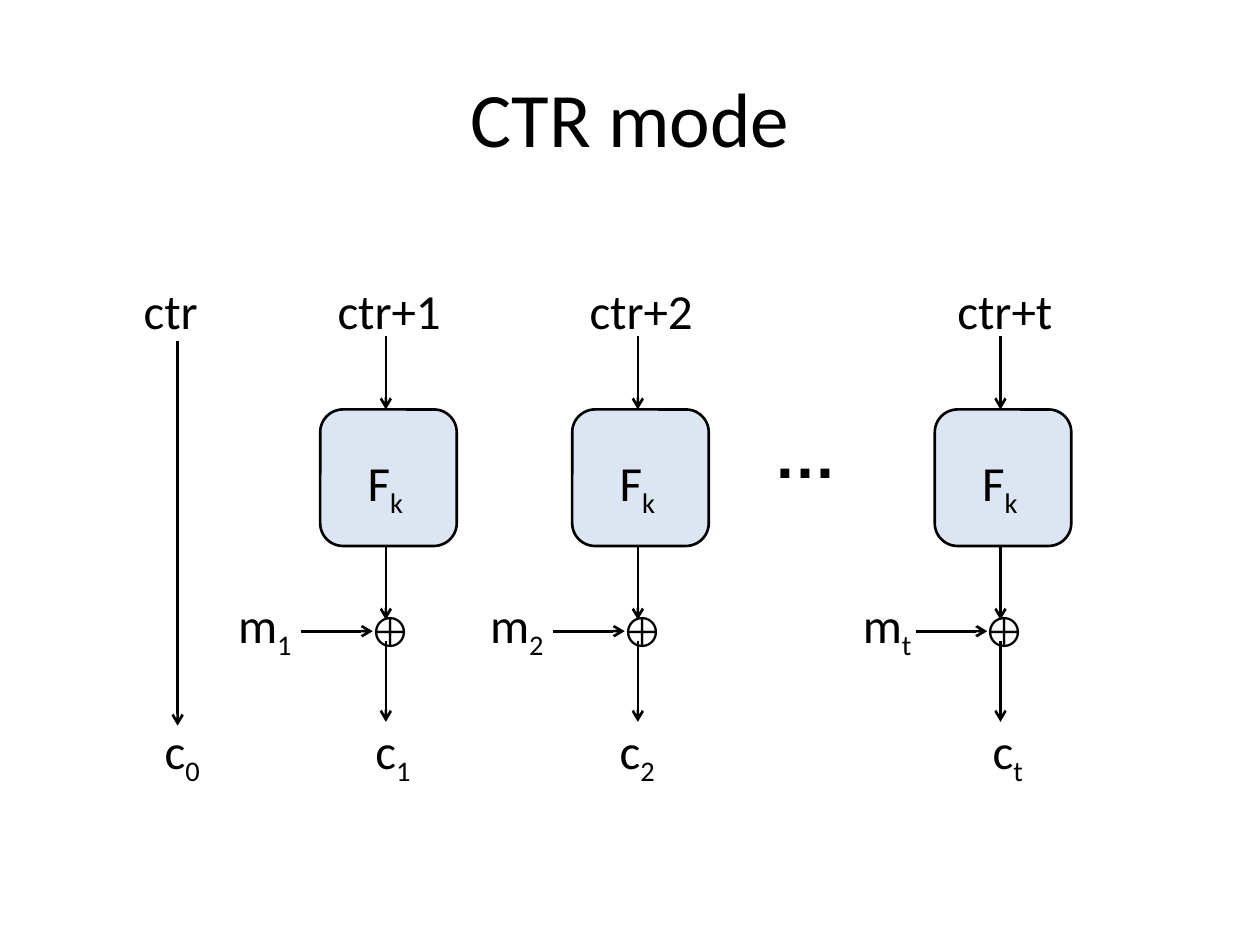
import pptx
import pptx.dml.color
import pptx.enum.shapes
import pptx.enum.text
import pptx.oxml
import pptx.oxml.ns
import pptx.util
from dataclasses import dataclass

Pt = pptx.util.Pt
RGB = pptx.dml.color.RGBColor


@dataclass(frozen=True)
class Theme:
    ink: RGB = RGB(0x00, 0x00, 0x00)
    block_fill: RGB = RGB(0xDC, 0xE6, 0xF2)
    font: str = "Calibri"
    symbol_font: str = "Arial"
    title_size: float = 44
    label_size: float = 28
    xor_size: float = 24
    dots_size: float = 36
    line_width: float = 1.5


THEME = Theme()
TITLE = "CTR mode"

# Each column: index, axis x, then (left, width) of counter, message and cipher labels
COLUMNS = [
    ("1", 220.5, (185.8, 74.2), (129, 46.8), (207.4, 36)),
    ("2", 364.5, (329.8, 74.2), (273, 46.8), (347, 36)),
    ("t", 571.7, (540, 70.6), (486, 43.2), (560.2, 33.8)),
]
INITIAL = {"axis": 101.5, "counter": (75, 46), "cipher": (87, 36)}
DOTS = (435, 234, 51, 51)

LABEL_HEIGHT = 41
COUNTER_TOP, KEY_TOP, MESSAGE_TOP, CIPHER_TOP = 157, 255, 336.2, 408.3
BLOCK_TOP, BLOCK_SIZE, BLOCK_OFFSET = 234, 78, 37.5
XOR_TOP, XOR_Y = 342.7, 360.7
VERTICAL_ARROWS = [(192.2, 234), (312.3, 354.2), (366.5, 412.5)]


def add_run(paragraph, text, size, font, bold=None, subscript=False):
    run = paragraph.add_run()
    run.text = text
    run.font.size = Pt(size)
    run.font.name = font
    run.font.bold = bold
    run.font.color.rgb = THEME.ink
    if subscript:
        run._r.get_or_add_rPr().set("baseline", "-25000")


def add_label(slide, box, text, subscript="", size=THEME.label_size,
              font=THEME.font, bold=None):
    shape = slide.shapes.add_textbox(*map(Pt, box))
    shape.text_frame.word_wrap = False
    shape.text_frame.auto_size = pptx.enum.text.MSO_AUTO_SIZE.SHAPE_TO_FIT_TEXT
    paragraph = shape.text_frame.paragraphs[0]
    add_run(paragraph, text, size, font, bold)
    if subscript:
        add_run(paragraph, subscript, size, font, bold, subscript=True)


def add_arrow(slide, start, end):
    connector = slide.shapes.add_connector(
        pptx.enum.shapes.MSO_CONNECTOR.STRAIGHT, *map(Pt, (*start, *end)))
    connector.line.color.rgb = THEME.ink
    connector.line.width = Pt(THEME.line_width)
    properties = connector._element.spPr
    tail = pptx.oxml.parse_xml(
        f'<a:tailEnd {pptx.oxml.ns.nsdecls("a")} type="arrow"/>')
    connector.line._get_or_add_ln().append(tail)
    properties.append(pptx.oxml.parse_xml(
        f'<a:effectLst {pptx.oxml.ns.nsdecls("a")}/>'))


def add_block(slide, left):
    """Draw one keyed function box with its label."""
    block = slide.shapes.add_shape(
        pptx.enum.shapes.MSO_SHAPE.ROUNDED_RECTANGLE,
        Pt(left), Pt(BLOCK_TOP), Pt(BLOCK_SIZE), Pt(BLOCK_SIZE))
    block.shadow.inherit = False
    block.fill.solid()
    block.fill.fore_color.rgb = THEME.block_fill
    block.line.color.rgb = THEME.ink
    block.line.width = Pt(THEME.line_width)
    add_label(slide, (left + 20, KEY_TOP, 36, LABEL_HEIGHT), "F", "k")


def add_column(slide, index, axis, counter, message, cipher):
    add_block(slide, axis - BLOCK_OFFSET)
    for box, top, text, subscript in [
        (counter, COUNTER_TOP, f"ctr+{index}", ""),
        (message, MESSAGE_TOP, "m", index),
        (cipher, CIPHER_TOP, "c", index),
    ]:
        left, width = box
        add_label(slide, (left, top, width, LABEL_HEIGHT), text, subscript)
    add_label(slide, (axis - 16.7, XOR_TOP, 33, 36.5), "⊕",
              size=THEME.xor_size, font=THEME.symbol_font)
    for top, bottom in VERTICAL_ARROWS:
        add_arrow(slide, (axis, top), (axis, bottom))
    add_arrow(slide, (axis - 48.5, XOR_Y), (axis - 7.5, XOR_Y))


def add_initial_counter(slide):
    left, width = INITIAL["counter"]
    add_label(slide, (left, COUNTER_TOP, width, LABEL_HEIGHT), "ctr")
    add_arrow(slide, (INITIAL["axis"], 195), (INITIAL["axis"], 414.7))
    left, width = INITIAL["cipher"]
    add_label(slide, (left, CIPHER_TOP, width, LABEL_HEIGHT), "c", "0")


def main():
    presentation = pptx.Presentation()
    presentation.slide_width, presentation.slide_height = Pt(720), Pt(540)
    slide = presentation.slides.add_slide(presentation.slide_layouts[5])

    title = slide.shapes.title
    title.left, title.top, title.width, title.height = map(Pt, (36, 21.6, 648, 90))
    title.text_frame.vertical_anchor = pptx.enum.text.MSO_ANCHOR.MIDDLE
    paragraph = title.text_frame.paragraphs[0]
    paragraph.alignment = pptx.enum.text.PP_ALIGN.CENTER
    add_run(paragraph, TITLE, THEME.title_size, THEME.font)

    add_initial_counter(slide)
    for column in COLUMNS:
        add_column(slide, *column)
    add_label(slide, DOTS, "…", size=THEME.dots_size,
              font=THEME.symbol_font, bold=True)
    presentation.save("out.pptx")


if __name__ == "__main__":
    main()
